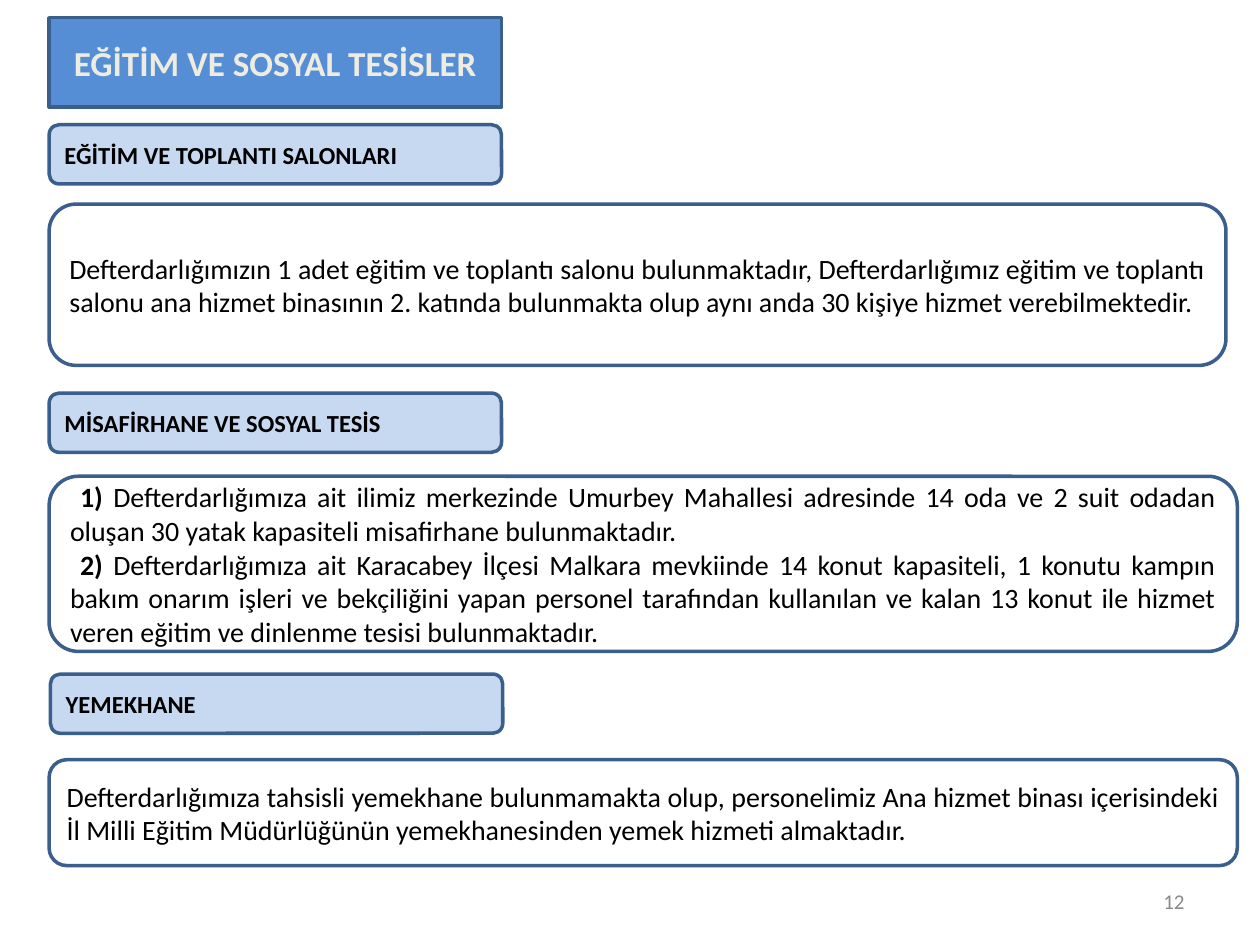
from lxml import etree
from pptx import Presentation
from pptx.dml.color import RGBColor
from pptx.enum.shapes import MSO_SHAPE
from pptx.enum.text import MSO_ANCHOR, MSO_AUTO_SIZE, PP_ALIGN
from pptx.oxml.ns import qn
from pptx.util import Inches, Pt

ROUNDED = MSO_SHAPE.ROUNDED_RECTANGLE
MIDDLE = MSO_ANCHOR.MIDDLE
NO_FIT = MSO_AUTO_SIZE.NONE
LEFT, CENTER, RIGHT, JUSTIFY = (
    PP_ALIGN.LEFT, PP_ALIGN.CENTER, PP_ALIGN.RIGHT, PP_ALIGN.JUSTIFY)

FONT = "Calibri"
TITLE_FILL, HEADING_FILL, OUTLINE = "558ED5", "C6D9F1", "3A5F8C"
TITLE_TEXT, BODY_TEXT, NUMBER_TEXT = "EEECE1", "000000", "898989"

MARGIN = 0.39
HEADING_WIDTH = 3.59
HEADING_HEIGHT = 0.47
FIRST_LINE_INDENT = 0.08

# Each section: heading, heading left and top, body top, width and height, paragraphs.
# A paragraph is a (number, text) pair; the number may be empty.
SECTIONS = [
    ("EĞİTİM VE TOPLANTI SALONLARI", MARGIN, 0.99, 1.62, 9.34, 1.28, [
        ("", "Defterdarlığımızın 1 adet eğitim ve toplantı salonu bulunmaktadır, "
             "Defterdarlığımız eğitim ve toplantı salonu ana hizmet binasının 2. katında "
             "bulunmakta olup aynı anda 30 kişiye hizmet verebilmektedir."),
    ]),
    ("MİSAFİRHANE VE SOSYAL TESİS", MARGIN, 3.12, 3.78, 9.43, 1.39, [
        ("1) ", "Defterdarlığımıza ait ilimiz merkezinde Umurbey Mahallesi adresinde "
                "14 oda ve 2 suit odadan oluşan 30 yatak kapasiteli misafirhane "
                "bulunmaktadır."),
        ("2) ", "Defterdarlığımıza ait Karacabey İlçesi Malkara mevkiinde 14 konut "
                "kapasiteli, 1 konutu kampın bakım onarım işleri ve bekçiliğini yapan "
                "personel tarafından kullanılan ve kalan 13 konut ile hizmet veren "
                "eğitim ve dinlenme tesisi bulunmaktadır."),
    ]),
    ("YEMEKHANE", 0.4, 5.35, 6.03, 9.43, 0.84, [
        ("", "Defterdarlığımıza tahsisli yemekhane bulunmamakta olup, personelimiz "
             "Ana hizmet binası içerisindeki İl Milli Eğitim Müdürlüğünün "
             "yemekhanesinden yemek hizmeti almaktadır."),
    ]),
]


def color(value):
    return RGBColor.from_string(value)


def style_box(shape, fill=None):
    """Give a box its fill and outline."""
    if fill:
        shape.fill.solid()
        shape.fill.fore_color.rgb = color(fill)
    else:
        shape.fill.background()
    shape.line.color.rgb = color(OUTLINE)
    shape.line.width = Pt(2)


def prepare_frame(shape):
    frame = shape.text_frame
    frame.auto_size = NO_FIT
    frame.word_wrap = True
    frame.vertical_anchor = MIDDLE
    return frame


def style_paragraph(paragraph, size, text_color, alignment, bold=None):
    paragraph.alignment = alignment
    paragraph.font.name = FONT
    paragraph.font.size = Pt(size)
    paragraph.font.color.rgb = color(text_color)
    paragraph.font.bold = bold


def set_text(shape, text, *style):
    paragraph = prepare_frame(shape).paragraphs[0]
    paragraph.text = text
    style_paragraph(paragraph, *style)


def add_box(slide, left, top, width, height, fill=None):
    shape = slide.shapes.add_shape(
        ROUNDED, Inches(left), Inches(top), Inches(width), Inches(height))
    shape.shadow.inherit = False
    style_box(shape, fill)
    return shape


def format_title(title):
    title.left, title.top = Inches(MARGIN), Inches(0.14)
    title.width, title.height = Inches(HEADING_WIDTH), Inches(0.71)
    # Rounded outline for the placeholder
    geometry = etree.SubElement(title.element.spPr, qn("a:prstGeom"), prst="roundRect")
    etree.SubElement(geometry, qn("a:avLst"))
    style_box(title, TITLE_FILL)
    set_text(title, "EĞİTİM VE SOSYAL TESİSLER", 20, TITLE_TEXT, CENTER, True)


def add_heading(slide, text, left, top):
    shape = add_box(slide, left, top, HEADING_WIDTH, HEADING_HEIGHT, HEADING_FILL)
    set_text(shape, text, 14, BODY_TEXT, LEFT, True)


def add_body(slide, top, width, height, items):
    frame = prepare_frame(add_box(slide, MARGIN, top, width, height))
    for index, (number, text) in enumerate(items):
        paragraph = frame.add_paragraph() if index else frame.paragraphs[0]
        style_paragraph(paragraph, 16, BODY_TEXT, JUSTIFY)
        if number:
            number_run = paragraph.add_run()
            number_run.text = number
            number_run.font.bold = True
            properties = paragraph._p.get_or_add_pPr()
            properties.set("indent", str(Inches(FIRST_LINE_INDENT)))
        paragraph.add_run().text = text


def add_page_number(slide, number):
    box = slide.shapes.add_textbox(
        Inches(7.17), Inches(6.95), Inches(2.33), Inches(0.4))
    set_text(box, number, 12, NUMBER_TEXT, RIGHT)


def main():
    presentation = Presentation()
    presentation.slide_width, presentation.slide_height = Inches(10), Inches(7.5)
    slide = presentation.slides.add_slide(presentation.slide_layouts[5])

    format_title(slide.shapes.title)
    for heading, left, heading_top, body_top, width, height, items in SECTIONS:
        add_heading(slide, heading, left, heading_top)
        add_body(slide, body_top, width, height, items)
    add_page_number(slide, "12")

    presentation.save("out.pptx")


if __name__ == "__main__":
    main()
